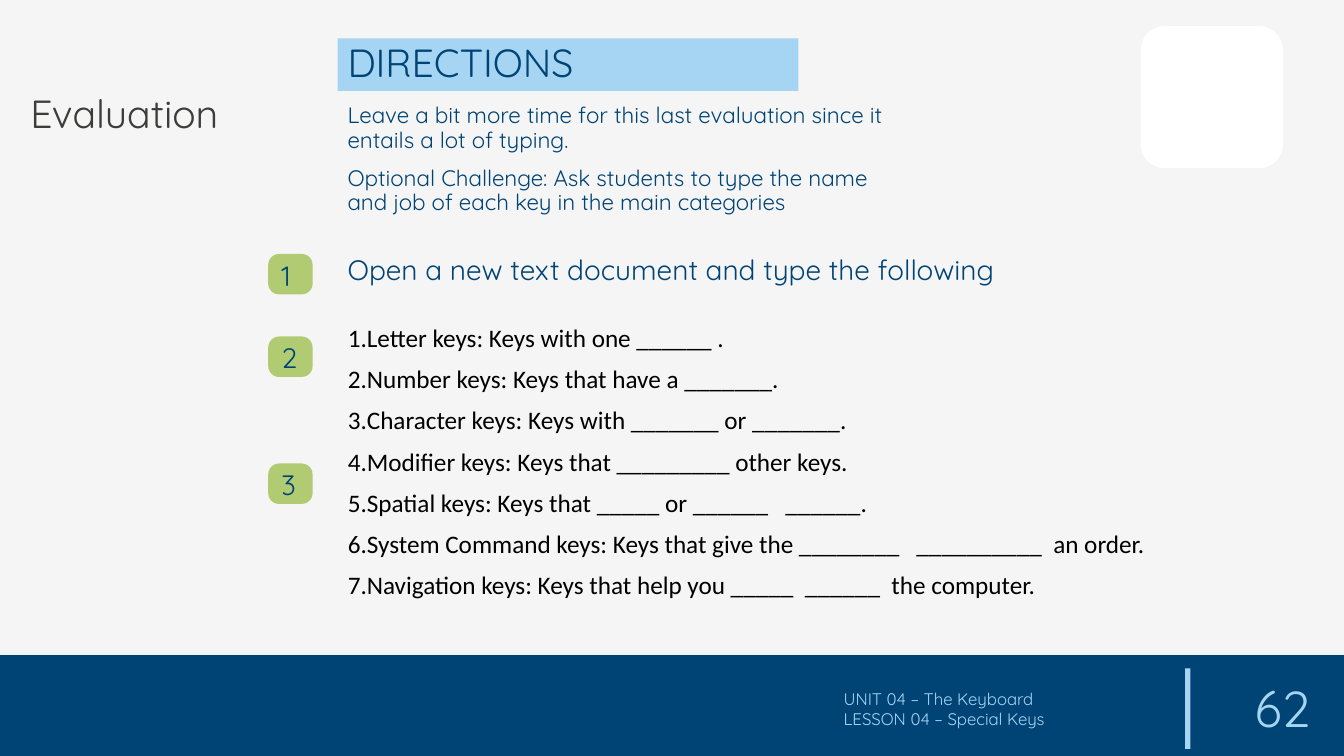
from pptx import Presentation
from pptx.dml.color import RGBColor
from pptx.enum.shapes import MSO_SHAPE as Preset
from pptx.enum.text import MSO_ANCHOR as Anchor, MSO_AUTO_SIZE as AutoSize, PP_ALIGN as Align
from pptx.oxml.xmlchemy import OxmlElement
from pptx.util import Cm, Pt

NAVY = RGBColor(0x00, 0x43, 0x75)
SKY = RGBColor(0xA6, 0xD5, 0xF4)
GREEN = RGBColor(0xB0, 0xCB, 0x72)
CHARCOAL = RGBColor(0x3C, 0x3C, 0x3B)
PAPER = RGBColor(0xF5, 0xF5, 0xF5)
WHITE = RGBColor(0xFF, 0xFF, 0xFF)
BLACK = RGBColor(0x00, 0x00, 0x00)

TITLE = "Evaluation"
HEADING = "DIRECTIONS"
DIRECTIONS = [
    "Leave a bit more time for this last evaluation since it entails a lot of typing.",
    "Optional Challenge: Ask students to type the name and job of each key in the main categories",
]
TASK = "Open a new text document and type the following"
KEY_SENTENCES = [
    "Letter keys: Keys with one ______ .",
    "Number keys: Keys that have a _______.",
    "Character keys: Keys with _______ or _______.",
    "Modifier keys: Keys that _________ other keys.",
    "Spatial keys: Keys that _____ or ______   ______.",
    "System Command keys: Keys that give the ________   __________  an order.",
    "Navigation keys: Keys that help you _____  ______  the computer.",
]
BADGES = [("1", 6.4), ("2", 8.48), ("3", 11.68)]
FOOTER = ["UNIT 04 – The Keyboard", "LESSON 04 – Special Keys"]
PAGE_NUMBER = "62"

TEXT_LEFT = 8.51
BADGE_LEFT, BADGE_WIDTH, BADGE_HEIGHT = 6.76, 1.12, 1.02


def place(box, left, top, width, height):
    box.left, box.top, box.width, box.height = Cm(left), Cm(top), Cm(width), Cm(height)


def add_panel(page, preset, area, color):
    panel = page.shapes.add_shape(preset, *map(Cm, area))
    panel.shadow.inherit = False
    panel.fill.solid()
    panel.fill.fore_color.rgb = color
    panel.line.fill.background()
    return panel


def write(box, lines, size, color, font="Quicksand", spacing=0.9, gap=10,
          align=Align.LEFT, anchor=Anchor.TOP, numbered=False):
    frame = box.text_frame
    frame.word_wrap = True
    frame.auto_size = AutoSize.NONE
    frame.vertical_anchor = anchor
    for index, line in enumerate(lines):
        para = frame.add_paragraph() if index else frame.paragraphs[0]
        if numbered:
            properties = para._p.get_or_add_pPr()
            properties.set("marL", "0")
            properties.set("indent", "0")
            number = OxmlElement("a:buAutoNum")
            number.set("type", "arabicPeriod")
            properties.append(number)
        para.alignment = align
        para.line_spacing = spacing
        para.space_before = Pt(gap if index else 0)
        span = para.add_run()
        span.text = line
        span.font.name = font
        span.font.size = Pt(size)
        span.font.color.rgb = color


def add_text(page, area, lines, size, color, **options):
    write(page.shapes.add_textbox(*map(Cm, area)), lines, size, color, **options)


def main():
    deck = Presentation()
    deck.slide_width, deck.slide_height = Cm(33.87), Cm(19.05)
    page = deck.slides.add_slide(deck.slide_layouts[1])
    page.background.fill.solid()
    page.background.fill.fore_color.rgb = PAPER

    title, key_list = page.shapes.title, page.placeholders[1]
    place(title, 0.51, 2.13, 6.55, 1.52)
    write(title, [TITLE], 28, CHARCOAL, spacing=1.0)
    place(key_list, TEXT_LEFT, 8.08, 21.77, 7.77)
    write(key_list, KEY_SENTENCES, 18, BLACK, font="Calibri", numbered=True)

    add_panel(page, Preset.RECTANGLE, (0, 16.51, 33.87, 2.54), NAVY)
    add_panel(page, Preset.RECTANGLE, (29.87, 16.84, 0.13, 2.03), SKY)
    add_panel(page, Preset.ROUNDED_RECTANGLE, (28.75, 0.66, 3.58, 3.58), WHITE)

    banner = add_panel(page, Preset.RECTANGLE, (TEXT_LEFT, 0.97, 11.61, 1.32), SKY)
    write(banner, [HEADING], 28, NAVY)
    add_text(page, (TEXT_LEFT, 2.51, 14.3, 3.25), DIRECTIONS, 16, NAVY)
    add_text(page, (TEXT_LEFT, 6.4, 24.28, 1.02), [TASK], 20, NAVY, spacing=0.8)

    for digit, top in BADGES:
        area = (BADGE_LEFT, top, BADGE_WIDTH, BADGE_HEIGHT)
        badge = add_panel(page, Preset.ROUNDED_RECTANGLE, area, GREEN)
        badge.adjustments[0] = 0.27
        write(badge, [digit], 20, NAVY)

    add_text(page, (21.01, 17.02, 8.56, 1.68), FOOTER, 12, SKY,
             spacing=1.0, gap=0, anchor=Anchor.MIDDLE)
    add_text(page, (30.25, 16.99, 3.02, 1.68), [PAGE_NUMBER], 36, SKY,
             spacing=1.0, align=Align.RIGHT, anchor=Anchor.MIDDLE)

    deck.save("out.pptx")


if __name__ == "__main__":
    main()
